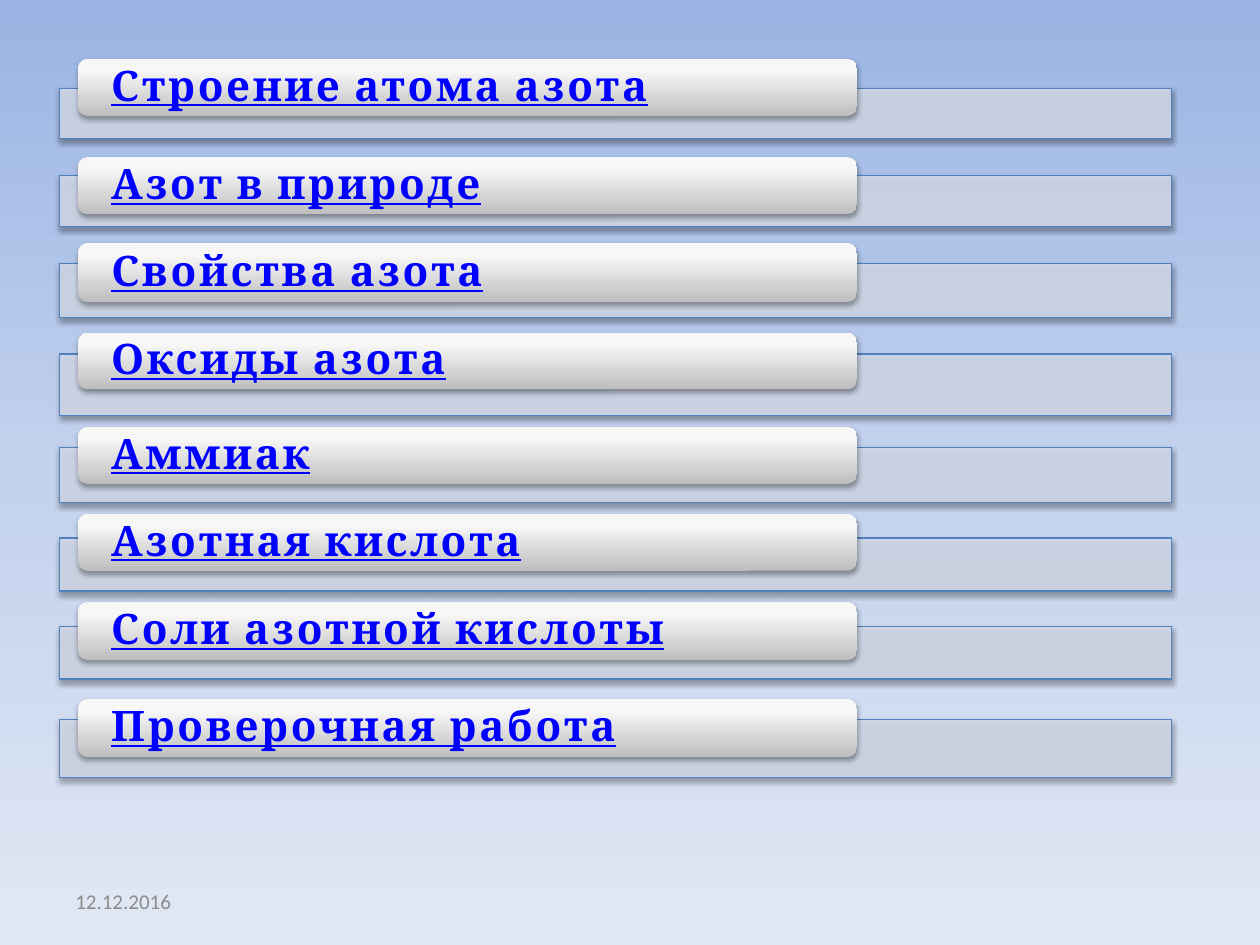
from lxml import etree
from pptx import Presentation
from pptx.dml.color import RGBColor
from pptx.enum.shapes import MSO_SHAPE
from pptx.enum.text import MSO_ANCHOR
from pptx.oxml.ns import qn
from pptx.util import Inches, Pt

RECT, ROUNDED = MSO_SHAPE.RECTANGLE, MSO_SHAPE.ROUNDED_RECTANGLE
MIDDLE = MSO_ANCHOR.MIDDLE

# Content: topic, bar top and height, button top and height
TOPICS = [
    ("Строение атома азота", 0.7, 0.4, 0.47, 0.45),
    ("Азот в природе", 1.39, 0.41, 1.25, 0.45),
    ("Свойства азота", 2.09, 0.43, 1.93, 0.47),
    ("Оксиды азота", 2.81, 0.49, 2.64, 0.45),
    ("Аммиак", 3.55, 0.44, 3.39, 0.45),
    ("Азотная кислота", 4.27, 0.42, 4.08, 0.45),
    ("Соли азотной кислоты", 4.97, 0.42, 4.78, 0.46),
    ("Проверочная работа", 5.71, 0.46, 5.55, 0.46),
]
DATE = "12.12.2016"

BAR_LEFT, BAR_WIDTH = 0.47, 8.83
BUTTON_LEFT, BUTTON_WIDTH = 0.62, 6.18
SKY = [(0, "9AB5E4"), (50, "C2D1ED"), (100, "E1E8F5")]
SILVER = [(0, "BEBEBE"), (80, "F7F7F7"), (100, "F8F8F8")]


def rgb(color):
    return RGBColor.from_string(color)


def add_child(parent, tag, **attributes):
    child = etree.SubElement(parent, qn(tag))
    for key, value in attributes.items():
        child.set(key, str(value))
    return child


def fill_gradient(element, fill, stops, angle):
    """angle is counter-clockwise, as python-pptx measures it."""
    fill.gradient()
    fill.gradient_angle = angle
    stop_list = next(element.iter(qn("a:gsLst")))
    for old_stop in list(stop_list):
        stop_list.remove(old_stop)
    for position, color in stops:
        stop = add_child(stop_list, "a:gs", pos=position * 1000)
        add_child(stop, "a:srgbClr", val=color)


def add_shadow(shape):
    shape.shadow.inherit = False
    effects = shape.element.spPr.find(qn("a:effectLst"))
    shadow = add_child(effects, "a:outerShdw", blurRad=Pt(3.1), dist=Pt(1.8),
                       dir=90 * 60000, rotWithShape=0)
    add_child(add_child(shadow, "a:srgbClr", val="000000"), "a:alpha", val=35000)


def write(shape, text, font, size, color, bold=False, underline=False,
          spacing=0, line_spacing=None, side=0.1, edge=0.05):
    frame = shape.text_frame
    frame.word_wrap = True
    frame.vertical_anchor = MIDDLE
    frame.margin_left = frame.margin_right = Inches(side)
    frame.margin_top = frame.margin_bottom = Inches(edge)
    paragraph = frame.paragraphs[0]
    paragraph.alignment = 1  # left
    paragraph.line_spacing = line_spacing
    run = paragraph.add_run()
    run.text = text
    run.font.name, run.font.size = font, Pt(size)
    run.font.bold, run.font.underline = bold, underline
    run.font.color.rgb = rgb(color)
    if spacing:
        run.font._element.set("spc", str(int(spacing * 100)))


def add_bar(slide, top, height):
    bar = slide.shapes.add_shape(RECT, Inches(BAR_LEFT), Inches(top),
                                 Inches(BAR_WIDTH), Inches(height))
    bar.fill.solid()
    bar.fill.fore_color.rgb = rgb("D0D8E8")
    color = bar.element.spPr.find(qn("a:solidFill"))[0]
    add_child(color, "a:alpha", val=90000)
    bar.line.color.rgb = rgb("4F81BD")
    bar.line.width = Pt(0.75)
    add_shadow(bar)


def add_button(slide, topic, top, height):
    button = slide.shapes.add_shape(ROUNDED, Inches(BUTTON_LEFT), Inches(top),
                                    Inches(BUTTON_WIDTH), Inches(height))
    fill_gradient(button.element, button.fill, SILVER, 90)
    button.line.fill.background()
    add_shadow(button)
    write(button, topic, "Cambria", 24, "0000FF", bold=True, underline=True,
          spacing=1.5, line_spacing=0.9, side=0.24, edge=0)


def main():
    prs = Presentation()
    prs.slide_width, prs.slide_height = Inches(10), Inches(7.5)
    slide = prs.slides.add_slide(prs.slide_layouts[6])
    fill_gradient(slide.element, slide.background.fill, SKY, 270)

    # Menu of topics
    for topic, bar_top, bar_height, button_top, button_height in TOPICS:
        add_bar(slide, bar_top, bar_height)
        add_button(slide, topic, button_top, button_height)

    # Date
    date = slide.shapes.add_textbox(Inches(0.5), Inches(6.95),
                                    Inches(2.33), Inches(0.4))
    write(date, DATE, "Calibri", 12, "8C8C8C")

    prs.save("out.pptx")


if __name__ == "__main__":
    main()
